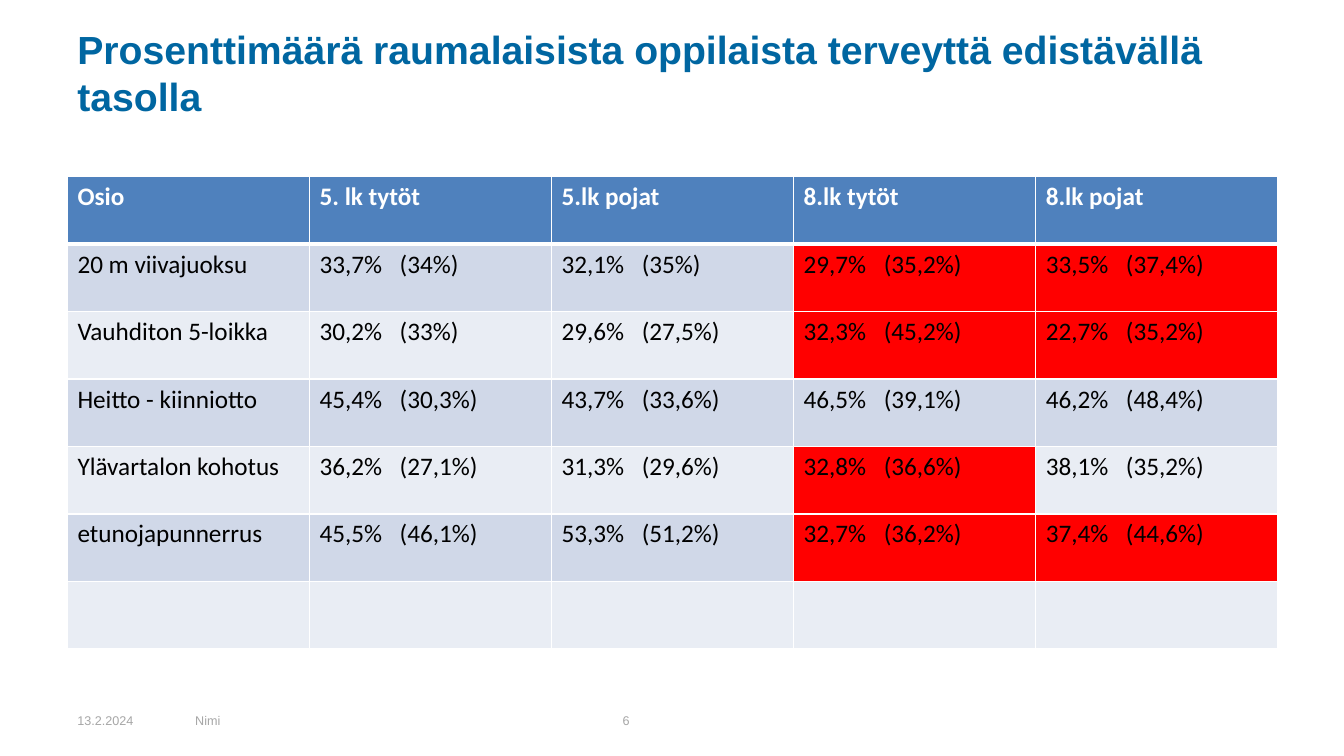
"""Build the slide on pupils who reach the health-enhancing fitness level."""
from lxml import etree
from pptx import Presentation
from pptx.dml.color import RGBColor
from pptx.enum.text import MSO_ANCHOR
from pptx.oxml.ns import qn
from pptx.util import Cm, Pt

MIDDLE = MSO_ANCHOR.MIDDLE
COLORS = {
    "title": "0066A1",
    "footer": "A6A6A6",
    "header": "4F81BD",
    "odd": "D0D8E8",
    "even": "E9EDF4",
    "alert": "FF0000",
    "white": "FFFFFF",
    "black": "000000",
}
HEADINGS = ["Osio", "5. lk tytöt", "5.lk pojat", "8.lk tytöt", "8.lk pojat"]
RESULTS = [
    ("20 m viivajuoksu", [("33,7", "34"), ("32,1", "35"), ("29,7", "35,2"), ("33,5", "37,4")]),
    ("Vauhditon 5-loikka", [("30,2", "33"), ("29,6", "27,5"), ("32,3", "45,2"), ("22,7", "35,2")]),
    ("Heitto - kiinniotto", [("45,4", "30,3"), ("43,7", "33,6"), ("46,5", "39,1"), ("46,2", "48,4")]),
    ("Ylävartalon kohotus", [("36,2", "27,1"), ("31,3", "29,6"), ("32,8", "36,6"), ("38,1", "35,2")]),
    ("etunojapunnerrus", [("45,5", "46,1"), ("53,3", "51,2"), ("32,7", "36,2"), ("37,4", "44,6")]),
    ("", []),
]
FOOTERS = [("13.2.2024", 1.7, 2.97), ("Nimi", 4.67, 10.72), ("6", 15.44, 7.9)]
ALERT_GAP = 3
LEFT = Cm(1.7)
COLUMN_WIDTH = Cm(6.1)
ROW_HEIGHT = Cm(1.7)
TAB_STOP = Cm(2.02)


def rgb(color):
    return RGBColor.from_string(COLORS[color])


def style_font(font, name, size, color, bold=False):
    font.name = name
    font.size = Pt(size)
    font.bold = bold
    font.color.rgb = rgb(color)


def add_label(slide, text, left, top, width, height, size, color, bold=False):
    frame = slide.shapes.add_textbox(left, top, width, height).text_frame
    frame.word_wrap = True
    frame.vertical_anchor = MIDDLE
    frame.text = text
    style_font(frame.paragraphs[0].runs[0].font, "Arial", size, color, bold)


def add_borders(cell, widths):
    properties = cell._tc.get_or_add_tcPr()
    for position, (side, width) in enumerate(widths.items()):
        line = etree.Element(qn(f"a:ln{side}"), w=str(Pt(width)))
        fill = etree.SubElement(line, qn("a:solidFill"))
        etree.SubElement(fill, qn("a:srgbClr"), val=COLORS["white"])
        properties.insert(position, line)


def add_tab_stop(paragraph):
    stops = etree.SubElement(paragraph._p.get_or_add_pPr(), qn("a:tabLst"))
    etree.SubElement(stops, qn("a:tab"), pos=str(TAB_STOP), algn="l")


def fill_cell(cell, text, background, row):
    cell.fill.solid()
    cell.fill.fore_color.rgb = rgb(background)
    add_borders(cell, {"L": 1, "R": 1, "T": 3 if row == 1 else 1, "B": 3 if row == 0 else 1})
    paragraph = cell.text_frame.paragraphs[0]
    if "\t" in text:
        add_tab_stop(paragraph)
    paragraph.text = text
    style_font(paragraph.font, "Calibri", 18, "black")
    for run in paragraph.runs:
        style_font(run.font, "Calibri", 18, "black" if row else "white", row == 0)


def number(percentage):
    return float(percentage.replace(",", "."))


def add_results(slide):
    column_count, row_count = len(HEADINGS), len(RESULTS) + 1
    table = slide.shapes.add_table(
        row_count, column_count, LEFT, Cm(4.45),
        COLUMN_WIDTH * column_count, ROW_HEIGHT * row_count,
    ).table
    for column in table.columns:
        column.width = COLUMN_WIDTH
    for table_row in table.rows:
        table_row.height = ROW_HEIGHT
    for column, heading in enumerate(HEADINGS):
        fill_cell(table.cell(0, column), heading, "header", 0)
    for row, (test, pairs) in enumerate(RESULTS, start=1):
        band = "odd" if row % 2 else "even"
        fill_cell(table.cell(row, 0), test, band, row)
        for column in range(1, column_count):
            text, background = "", band
            if pairs:
                local, reference = pairs[column - 1]
                text = f"{local}%\t({reference}%)"
                if number(reference) - number(local) > ALERT_GAP:
                    background = "alert"
            fill_cell(table.cell(row, column), text, background, row)


def main():
    presentation = Presentation()
    presentation.slide_width = Cm(33.87)
    presentation.slide_height = Cm(19.05)
    slide = presentation.slides.add_slide(presentation.slide_layouts[6])
    add_label(
        slide, "Prosenttimäärä raumalaisista oppilaista terveyttä edistävällä tasolla",
        LEFT, Cm(0.23), Cm(30.48), Cm(3.18), 28, "title", True,
    )
    add_results(slide)
    for text, left, width in FOOTERS:
        add_label(slide, text, Cm(left), Cm(17.65), Cm(width), Cm(1.02), 9, "footer")
    presentation.save("out.pptx")


if __name__ == "__main__":
    main()
